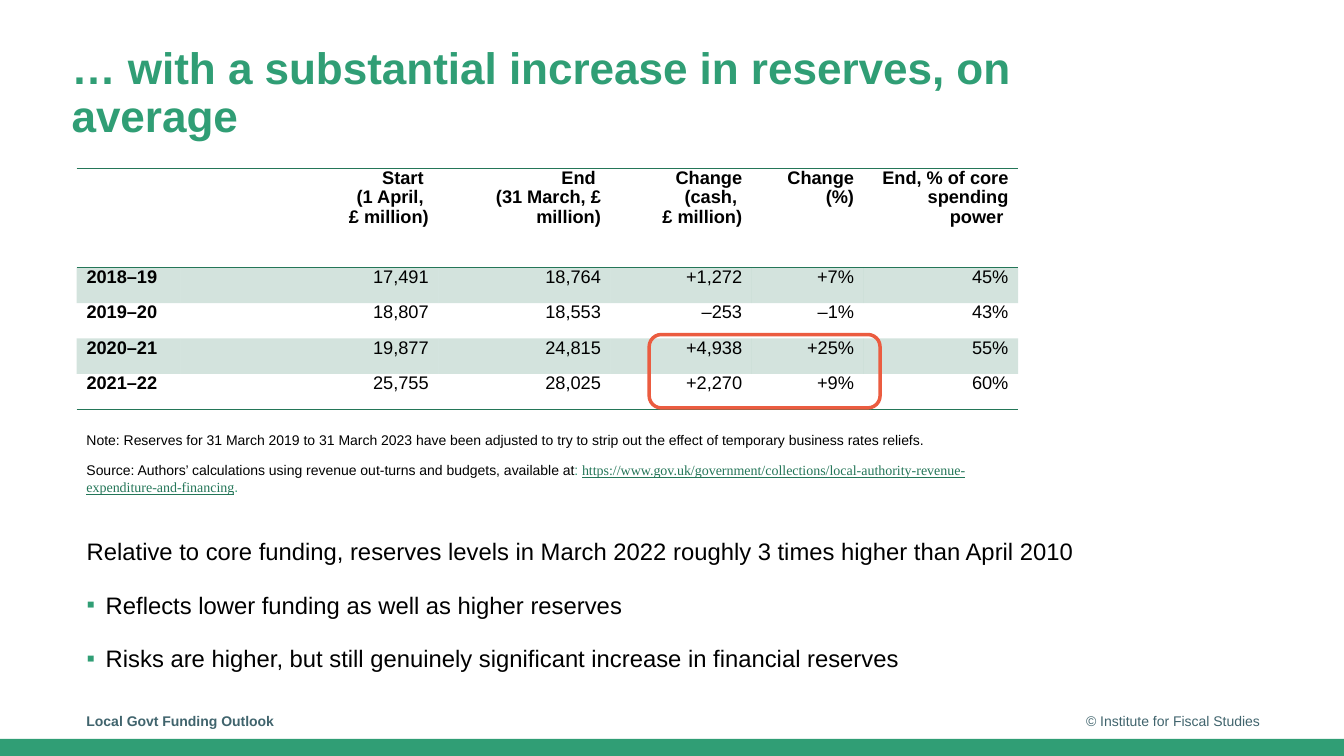
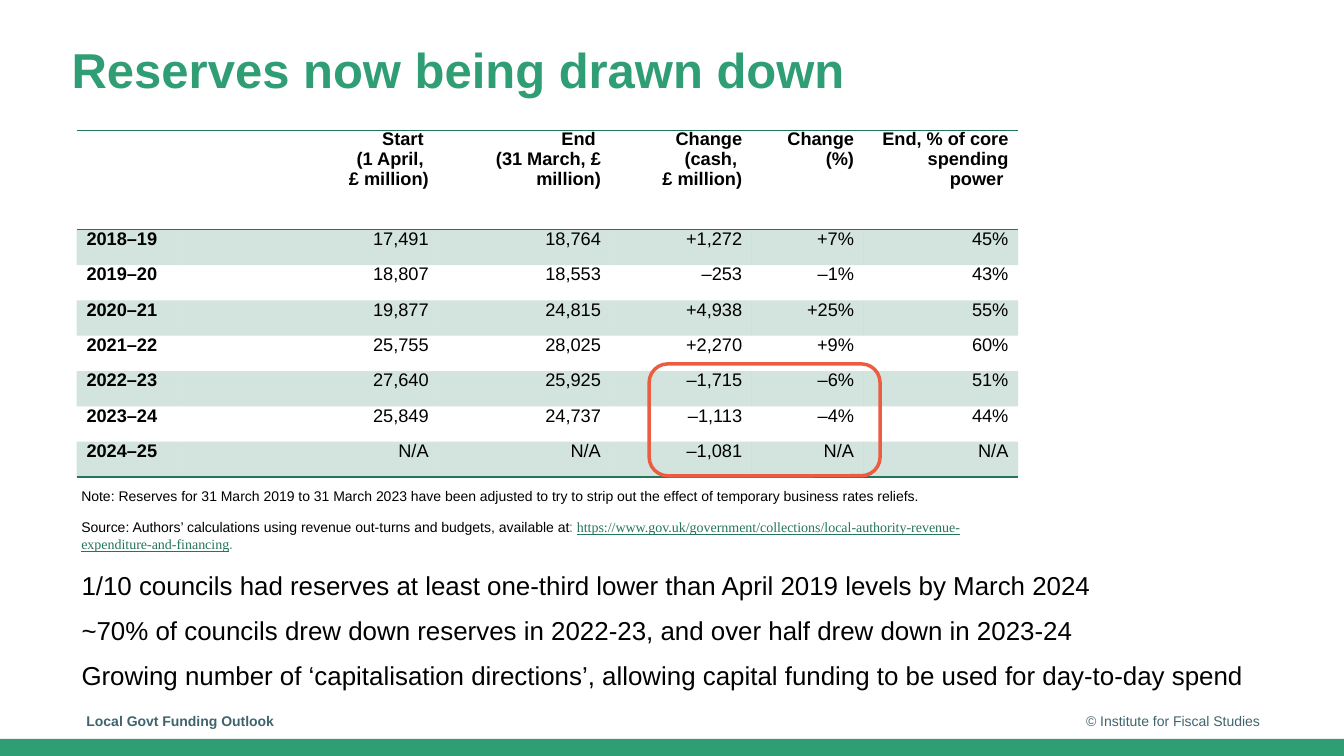
from dataclasses import dataclass

from lxml import etree
from pptx import Presentation
from pptx import util as u
from pptx.dml.color import RGBColor
from pptx.enum import shapes, text
from pptx.oxml.ns import qn

Cm, Pt = u.Cm, u.Pt


@dataclass(frozen=True)
class Theme:
    green: str = "309E75"
    dark_green: str = "247658"
    slate: str = "40646D"
    orange: str = "EB5C40"
    black: str = "000000"
    font: str = "Arial"
    link_font: str = "Times New Roman"
    small: float = 10
    cell: float = 13


NO_TABLE_STYLE = "{2D5ABB26-0587-4C30-8999-92F81FD0307C}"
COLUMNS = [2.62, 6.5, 4.34, 3.56, 2.82, 3.89]
HEADER_HEIGHT, ROW_HEIGHT = 2.51, 0.89
HEADER = [
    "",
    "Start \v(1 April, \v£ million)",
    "End \v(31 March, £ million)",
    "Change (cash, \v£ million)",
    "Change (%)",
    "End, % of core spending power ",
]
RESERVES = [
    ["2018–19", "17,491", "18,764", "+1,272", "+7%", "45%"],
    ["2019–20", "18,807", "18,553", "–253", "–1%", "43%"],
    ["2020–21", "19,877", "24,815", "+4,938", "+25%", "55%"],
    ["2021–22", "25,755", "28,025", "+2,270", "+9%", "60%"],
    ["2022–23", "27,640", "25,925", "–1,715", "–6%", "51%"],
    ["2023–24", "25,849", "24,737", "–1,113", "–4%", "44%"],
    ["2024–25", "N/A", "N/A", "–1,081", "N/A", "N/A"],
]
NOTE = ("Note: Reserves for 31 March 2019 to 31 March 2023 have been adjusted "
        "to try to strip out the effect of temporary business rates reliefs.")
SOURCE = ("Source: Authors’ calculations using revenue out-turns and budgets, "
          "available at")
SOURCE_URL = ("https://www.gov.uk/government/collections/"
              "local-authority-revenue-expenditure-and-financing")


def add_xml(parent, tag, **attrs):
    return etree.SubElement(parent, qn(tag), attrs)


def place(sp, left, top, width, height):
    sp.left, sp.top, sp.width, sp.height = map(Cm, (left, top, width, height))


class Deck:
    """Holds the theme, the presentation and the slide being built."""

    def __init__(self, theme):
        self.theme = theme
        self.prs = Presentation()
        self.prs.slide_width, self.prs.slide_height = Cm(33.87), Cm(19.05)

    def style(self, font, size, color, bold=False, name=None):
        font.name = name or self.theme.font
        font.size, font.bold = Pt(size), bold
        font.color.rgb = RGBColor.from_string(color)

    def new_slide(self, title, size):
        self.s = self.prs.slides.add_slide(self.prs.slide_layouts[1])
        self.title(title, size)
        self.band()
        self.footer("Local Govt Funding Outlook", 1.93, 22.45, bold=True)
        self.footer("© Institute for Fiscal Studies", 24.38, 7.62,
                    align=text.PP_ALIGN.RIGHT)

    def title(self, words, size):
        sp = self.s.shapes.title
        place(sp, 1.55, 1.04, 25.8, 1.6)
        tf = sp.text_frame
        tf.text = words
        tf.auto_size = text.MSO_AUTO_SIZE.NONE
        tf.vertical_anchor = text.MSO_ANCHOR.TOP
        p = tf.paragraphs[0]
        p.alignment, p.line_spacing = text.PP_ALIGN.LEFT, 0.9
        self.style(p.font, size, self.theme.green, bold=True)

    def band(self):
        sp = self.s.shapes.add_shape(shapes.MSO_SHAPE.RECTANGLE, 0, Cm(18.62),
                                     self.prs.slide_width, Cm(0.43))
        sp.shadow.inherit = False
        sp.fill.solid()
        sp.fill.fore_color.rgb = RGBColor.from_string(self.theme.green)
        sp.line.fill.background()

    def text_box(self, left, top, width, height):
        tf = self.s.shapes.add_textbox(*map(Cm, (left, top, width, height))).text_frame
        tf.word_wrap = True
        return tf

    def footer(self, words, left, width, bold=False, align=text.PP_ALIGN.LEFT):
        tf = self.text_box(left, 17.65, width, 1.02)
        tf.vertical_anchor = text.MSO_ANCHOR.MIDDLE
        p = tf.paragraphs[0]
        p.text, p.alignment = words, align
        self.style(p.font, self.theme.small, self.theme.slate, bold)

    def table(self, rows, top):
        """Draw the header and rows; shade every other row."""
        height = HEADER_HEIGHT + ROW_HEIGHT * len(rows)
        tbl = self.s.shapes.add_table(
            len(rows) + 1, len(COLUMNS), Cm(1.93), Cm(top),
            Cm(sum(COLUMNS)), Cm(height)).table
        tbl._tbl.tblPr.find(qn("a:tableStyleId")).text = NO_TABLE_STYLE
        tbl.first_row = tbl.horz_banding = False
        for column, width in zip(tbl.columns, COLUMNS):
            column.width = Cm(width)
        for i, values in enumerate([HEADER] + rows):
            tbl.rows[i].height = Cm(ROW_HEIGHT if i else HEADER_HEIGHT)
            sides = {0: ("a:lnT", "a:lnB"), len(rows): ("a:lnB",)}.get(i, ())
            for j, value in enumerate(values):
                self.cell(tbl.cell(i, j), value, bold=i == 0 or j == 0,
                          left=j == 0, shaded=i % 2 == 1, sides=sides)

    def cell(self, cell, value, bold, left, shaded, sides):
        cell.margin_left = cell.margin_right = Cm(0.25)
        cell.margin_top = cell.margin_bottom = 0
        p = cell.text_frame.paragraphs[0]
        p.text, p.line_spacing = value, Pt(14)
        p.alignment = text.PP_ALIGN.LEFT if left else text.PP_ALIGN.RIGHT
        self.style(p.font, self.theme.cell, self.theme.black, bold)
        tc_pr = cell._tc.get_or_add_tcPr()
        for side in sides:
            ln = add_xml(tc_pr, side, w=str(Pt(1)))
            add_xml(add_xml(ln, "a:solidFill"), "a:srgbClr", val=self.theme.dark_green)
        if shaded:
            color = add_xml(add_xml(tc_pr, "a:solidFill"), "a:srgbClr",
                            val=self.theme.dark_green)
            add_xml(color, "a:alpha", val="20000")
        else:
            add_xml(tc_pr, "a:noFill")

    def highlight(self, top, height):
        sp = self.s.shapes.add_shape(shapes.MSO_SHAPE.ROUNDED_RECTANGLE,
                                     *map(Cm, (16.36, top, 5.82, height)))
        sp.shadow.inherit = False
        sp.fill.background()
        sp.line.color.rgb = RGBColor.from_string(self.theme.orange)
        sp.line.width = Pt(2.5)

    def note(self, left, top):
        t = self.theme
        tf = self.text_box(left, top, 23.95, 1.9)
        p = tf.paragraphs[0]
        p.text, p.line_spacing, p.space_after = NOTE, Pt(12), Pt(6)
        self.style(p.font, t.small, t.black)
        p = tf.add_paragraph()
        p.line_spacing, p.space_before = Pt(12), Pt(4)
        for words, color, name in [(SOURCE, t.black, t.font),
                                   (": ", t.green, t.font),
                                   (SOURCE_URL, t.dark_green, t.link_font),
                                   (".", t.green, t.font)]:
            r = p.add_run()
            r.text = words
            self.style(r.font, t.small, color, name=name)
            r.font.underline = words == SOURCE_URL

    def bullet(self, p, shown):
        p_pr = p._p.get_or_add_pPr()
        indent = Cm(0.48) if shown else 0
        p_pr.set("marL", str(indent))
        p_pr.set("indent", str(-indent))
        if shown:
            add_xml(add_xml(p_pr, "a:buClr"), "a:srgbClr", val=self.theme.green)
            add_xml(p_pr, "a:buFont", typeface=self.theme.font)
            add_xml(p_pr, "a:buChar", char="▪")
        else:
            add_xml(p_pr, "a:buNone")

    def body(self, lines, left, top, size, spacing=1.0, before=0, bulleted=False):
        """Fill the body; with bulleted, all lines but the first get a bullet."""
        sp = self.s.placeholders[1]
        place(sp, left, top, 30.81, 3.63)
        tf = sp.text_frame
        tf.auto_size = text.MSO_AUTO_SIZE.NONE
        for i, line in enumerate(lines):
            p = tf.add_paragraph() if i else tf.paragraphs[0]
            p.text = line
            self.bullet(p, bulleted and i > 0)
            p.line_spacing = spacing
            p.space_before, p.space_after = Pt(before if i else 0), Pt(10)
            self.style(p.font, size, self.theme.black)


def main():
    deck = Deck(Theme())

    deck.new_slide("… with a substantial increase in reserves, on average", 31.5)
    deck.table(RESERVES[:4], top=4.24)
    deck.note(1.93, 10.74)
    deck.highlight(8.43, 1.85)
    deck.body([
        "Relative to core funding, reserves levels in March 2022 roughly "
        "3 times higher than April 2010",
        "Reflects lower funding as well as higher reserves",
        "Risks are higher, but still genuinely significant increase in "
        "financial reserves",
    ], 1.93, 13.54, 17, spacing=0.8, before=12, bulleted=True)

    deck.new_slide("Reserves now being drawn down", 35)
    deck.table(RESERVES, top=3.28)
    deck.note(1.8, 12.17)
    deck.highlight(9.17, 2.82)
    deck.body([
        "1/10 councils had reserves at least one-third lower than April 2019 "
        "levels by March 2024",
        "~70% of councils drew down reserves in 2022-23, and over half drew "
        "down in 2023-24",
        "Growing number of ‘capitalisation directions’, allowing capital "
        "funding to be used for day-to-day spend",
    ], 1.8, 14.22, 18.5)

    deck.prs.save("out.pptx")


if __name__ == "__main__":
    main()
